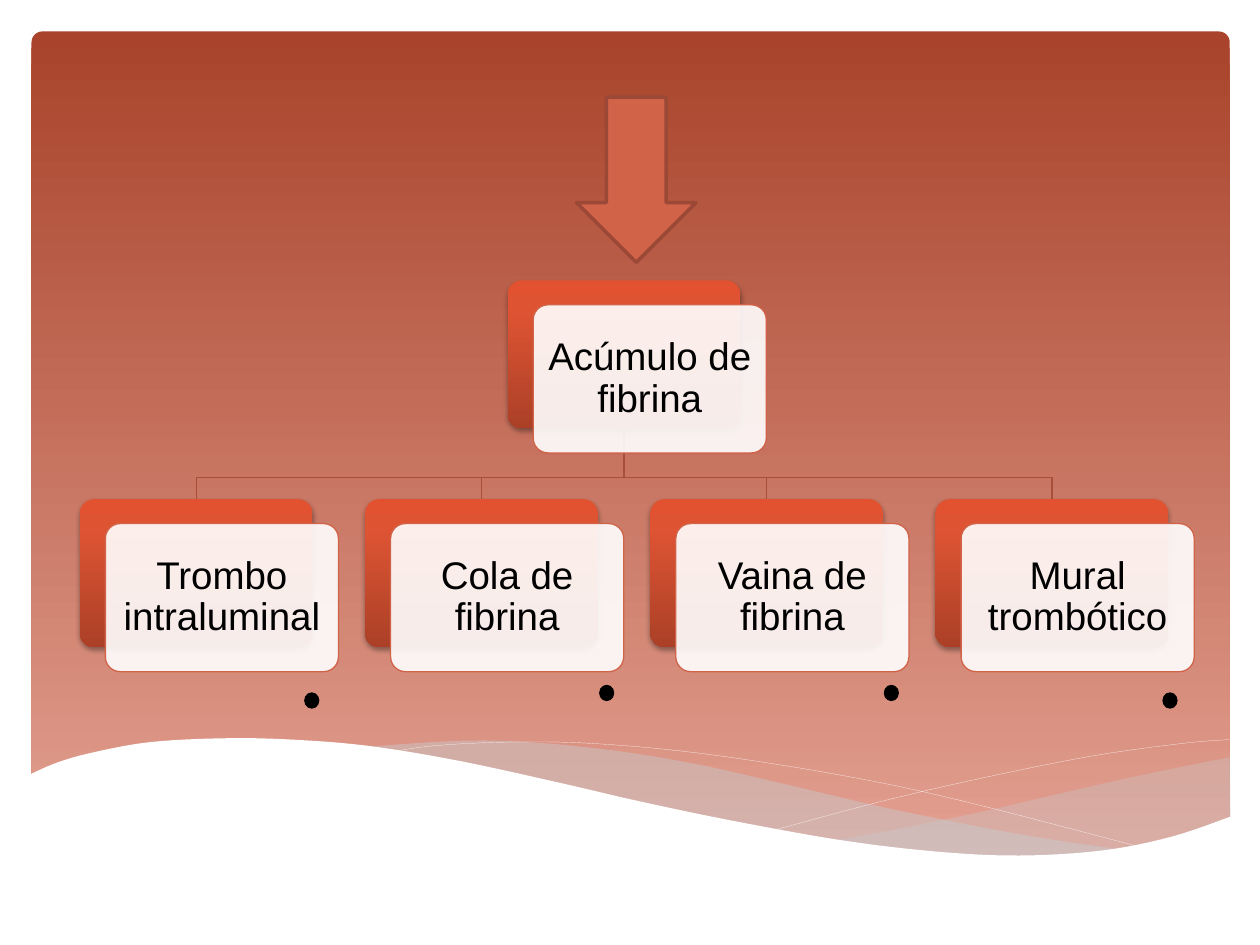
from lxml import etree
from pptx import Presentation
from pptx.dml.color import RGBColor
from pptx.enum.shapes import MSO_SHAPE
from pptx.enum.text import MSO_ANCHOR, PP_ALIGN
from pptx.oxml.ns import qn
from pptx.util import Pt

ROUND, ARROW, DOT = MSO_SHAPE.ROUNDED_RECTANGLE, MSO_SHAPE.DOWN_ARROW, MSO_SHAPE.OVAL
MIDDLE, CENTER = MSO_ANCHOR.MIDDLE, PP_ALIGN.CENTER

# Content
ROOT = "Acúmulo de fibrina"
KINDS = ["Trombo intraluminal", "Cola de fibrina", "Vaina de fibrina", "Mural trombótico"]
DOTS = [(174.2, 396), (342.7, 391.7), (505.4, 391.7), (664.6, 396)]

THEME = {
    "font": "Arial", "size": 22, "text": "000000",
    "sky": [(0, "A9432B"), (100, "E3A192")],
    "back": [(0, "E35230"), (20, "DE5433"), (100, "AB4027")],
    "card": "FFFFFF", "edge": "D16349", "link": "A74F3A",
    "arrow": "D16349", "rim": "9B4936", "haze": "C5D1D7", "white": "FFFFFF",
}

# Knots of the wave edges
HAZE_R = [
    [(702.7, 432.7), (653, 442.8), (620.6, 450), (561.6, 463.7), (509, 474.5), (476.6, 480.2)],
    [(476.6, 480.2), (508.3, 484.6), (554.4, 488.9), (601.9, 488.9), (640.8, 485.3),
     (674.6, 477.4), (703.4, 467.3)],
]
HAZE_L = [
    [(643.7, 486), (581.8, 476.6), (509, 462.2), (453.6, 449.3), (399.6, 437),
     (352.1, 429.1), (302.4, 424.1), (260.6, 423.4), (206.6, 427)],
    [(206.6, 427), (261.4, 435.6), (324, 449.3), (408.2, 468), (479.5, 481),
     (530.6, 487.4), (581.8, 489.6), (625, 488.2), (643.7, 486)],
]
STRANDS = [
    [(223.2, 429.8), (247.7, 426.2), (289.4, 424.1), (337.7, 424.8), (401, 430.6),
     (479.5, 442.8), (547.9, 457.2), (653.8, 484.6)],
    [(442, 474.5), (501.1, 458.6), (559.4, 445), (624.2, 432), (676, 424.8), (702.7, 422.6)],
]
FLOOR = [
    [(703.4, 466.6), (669.6, 478.1), (630, 486), (582.5, 488.9), (535.7, 486.7),
     (481, 480.2), (416.9, 468.7), (362.2, 457.2), (321.8, 447.8), (262.8, 434.9),
     (210.2, 426.2), (165.6, 422.6), (127.4, 421.9), (85.7, 424.1), (54, 429.8),
     (33.1, 435.6), (16.6, 442.8)],
    [(16.6, 526.3), (703.4, 526.3)],
]

# Layout of the tree
WIDE, HIGH = 133.2, 84.6
LEFT, STEP = 45.5, 163
TOP, ROW, TURN = 160.2, 285.2, 272.7
SHIFT_X, SHIFT_Y = 14.7, 14
PAD_X, PAD_Y = 6, 9
MID = LEFT + STEP * (len(KINDS) - 1) / 2


def rgb(name):
    return RGBColor.from_string(THEME[name])


def paint(shape, fill=None, line=None, width=0.75, alpha=None):
    shape.shadow.inherit = False
    if fill:
        shape.fill.solid()
        shape.fill.fore_color.rgb = rgb(fill)
        if alpha:
            color = shape.fill._xPr.find(qn("a:solidFill"))[0]
            etree.SubElement(color, qn("a:alpha"), val=str(alpha * 1000))
    else:
        shape.fill.background()
    if line:
        shape.line.color.rgb = rgb(line)
        shape.line.width = Pt(width)
    else:
        shape.line.fill.background()


def blend(shape, stops):
    """Fill from top to bottom with the given stops."""
    shape.fill.gradient()
    shape.fill.gradient_angle = 270
    stop_list = shape._element.spPr.find(".//" + qn("a:gsLst"))
    for old in list(stop_list):
        stop_list.remove(old)
    for place, color in stops:
        stop = etree.SubElement(stop_list, qn("a:gs"), pos=str(place * 1000))
        etree.SubElement(stop, qn("a:srgbClr"), val=color)


def shade(shape):
    effects = shape._element.spPr.find(qn("a:effectLst"))
    outer = etree.SubElement(effects, qn("a:outerShdw"), blurRad=str(Pt(3.1)),
                             dist=str(Pt(1.8)), dir="5400000", rotWithShape="0")
    color = etree.SubElement(outer, qn("a:srgbClr"), val="000000")
    etree.SubElement(color, qn("a:alpha"), val="35000")


def add(kind, x, y, w, h, adj=None):
    shape = shapes.add_shape(kind, Pt(x), Pt(y), Pt(w), Pt(h))
    if adj is not None:
        shape.adjustments[0] = adj
    return shape


def smooth(knots, parts=6):
    """Curve through all knots (Catmull-Rom)."""
    if len(knots) < 3:
        return knots
    ends = [knots[0], *knots, knots[-1]]
    curve = [knots[0]]
    for a, b, c, d in zip(ends, ends[1:], ends[2:], ends[3:]):
        for n in range(1, parts + 1):
            t = n / parts
            curve.append(tuple(
                (2 * q + (r - p) * t + (2 * p - 5 * q + 4 * r - s) * t ** 2
                 + (3 * q - p - 3 * r + s) * t ** 3) / 2
                for p, q, r, s in zip(a, b, c, d)))
    return curve


def trace(points, close=False):
    grid = [(x * 100, y * 100) for x, y in points]
    path = shapes.build_freeform(*grid[0], scale=Pt(1) / 100)
    path.add_line_segments(grid[1:], close=close)
    return path.convert_to_shape()


def wave(edges, fill, alpha=None):
    points = [point for edge in edges for point in smooth(edge)]
    paint(trace(points, True), fill, alpha=alpha)


def node(text, x, y, line):
    back = add(ROUND, x, y, WIDE, HIGH, 0.1)
    paint(back)
    blend(back, THEME["back"])
    shade(back)
    card = add(ROUND, x + SHIFT_X, y + SHIFT_Y, WIDE, HIGH, 0.1)
    paint(card, "card", line, alpha=90)
    frame = card.text_frame
    frame.word_wrap = True
    frame.vertical_anchor = MIDDLE
    frame.margin_left = frame.margin_right = Pt(PAD_X)
    frame.margin_top = frame.margin_bottom = Pt(PAD_Y)
    para = frame.paragraphs[0]
    para.alignment = CENTER
    para.line_spacing = 0.9
    run = para.add_run()
    run.text = text
    run.font.name = THEME["font"]
    run.font.size = Pt(THEME["size"])
    run.font.color.rgb = rgb("text")


deck = Presentation()
deck.slide_width, deck.slide_height = Pt(720), Pt(540)
shapes = deck.slides.add_slide(deck.slide_layouts[6]).shapes

# Backdrop and waves
sky = add(ROUND, 18, 18, 684.7, 475.2, 0.013)
paint(sky)
blend(sky, THEME["sky"])
wave(HAZE_R, "haze", 29)
wave(HAZE_L, "haze", 40)
for strand in STRANDS:
    paint(trace(smooth(strand)), line="white", width=0.1)
wave(FLOOR, "white")

# Tree links, then nodes
lefts = [LEFT + STEP * i for i in range(len(KINDS))]
trunk = MID + WIDE / 2
for x in reversed(lefts):
    end = x + WIDE / 2
    paint(trace([(trunk, TOP + HIGH), (trunk, TURN), (end, TURN), (end, ROW)]), line="link")
node(ROOT, MID, TOP, "edge")
for text, x in zip(KINDS, lefts):
    node(text, x, ROW, "edge")

# Arrow and dots
paint(add(ARROW, 329.4, 55.6, 68.4, 94.4), "arrow", "rim", 2)
for x, y in DOTS:
    paint(add(DOT, x, y, 7.9, 8.6), "text", "text")

deck.save("out.pptx")
